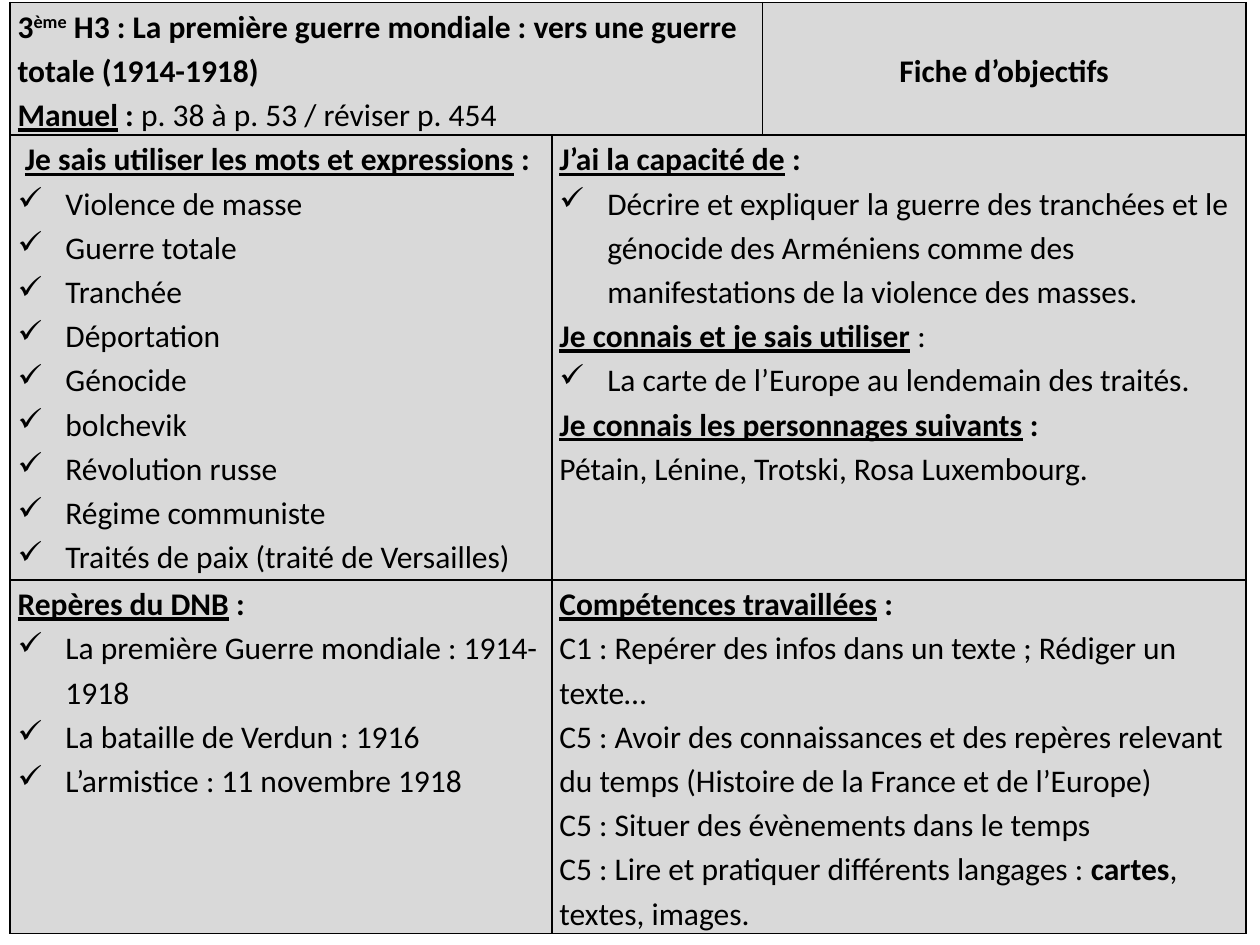
from lxml import etree
from pptx import Presentation
from pptx.dml.color import RGBColor
from pptx.enum import text
from pptx.oxml.ns import qn
from pptx.util import Inches, Pt

FONT, SIZE, INK, GREY = "Calibri", 18, "000000", "D9D9D9"
COLS = [4.3, 1.67, 3.84]
ROWS = [1.02, 3.53, 2.65]
HANG = 0.38


def head(label, tail=" :", style="b"):
    """Underlined heading followed by its colon."""
    return "head", [(label, "bu"), (tail, style)]


def items(*lines):
    return [("item", [(line, "")]) for line in lines]


def plain(*lines):
    return [("plain", [(line, "")]) for line in lines]


# Run styles: b bold, u underlined, s superscript
TITLE = [
    ("plain", [("3", "b"), ("ème", "bs"),
               (" H3 : La première guerre mondiale : vers une guerre totale (1914-1918)", "b")]),
    ("plain", [("Manuel", "bu"), (" :", "b"), (" p. 38 à p. 53 / réviser p. 454", "")]),
]
SHEET = [("center", [("Fiche d’objectifs", "b")])]
WORDS = [
    ("plain", [(" ", "b"), ("Je sais utiliser les mots et expressions", "bu"), (" :", "b")]),
    *items("Violence de masse", "Guerre totale", "Tranchée", "Déportation", "Génocide",
           "bolchevik", "Révolution russe", "Régime communiste",
           "Traités de paix (traité de Versailles)"),
]
SKILLS = [
    head("J’ai la capacité de"),
    *items("Décrire et expliquer la guerre des tranchées et le génocide des Arméniens "
           "comme des manifestations de la violence des masses."),
    head("Je connais et je sais utiliser", style=""),
    *items("La carte de l’Europe au lendemain des traités."),
    head("Je connais les personnages suivants"),
    *plain("Pétain, Lénine, Trotski, Rosa Luxembourg."),
]
DATES = [
    head("Repères du DNB", " :"),
    *items("La première Guerre mondiale : 1914-1918", "La bataille de Verdun : 1916",
           "L’armistice : 11 novembre 1918"),
]
TASKS = [
    head("Compétences travaillées"),
    *plain("C1 : Repérer des infos dans un texte ; Rédiger un texte…",
           "C5 : Avoir des connaissances et des repères relevant du temps "
           "(Histoire de la France et de l’Europe)",
           "C5 : Situer des évènements dans le temps"),
    ("plain", [("C5 : Lire et pratiquer différents langages : ", ""), ("cartes", "b"),
               (", textes, images.", "")]),
]
# Row, first column, last column, paragraphs
CELLS = [
    (0, 0, 1, TITLE), (0, 2, 2, SHEET),
    (1, 0, 0, WORDS), (1, 1, 2, SKILLS),
    (2, 0, 0, DATES), (2, 1, 2, TASKS),
]


def color(code):
    return RGBColor.from_string(code)


def add_check(para):
    props = para._p.get_or_add_pPr()
    props.set("marL", str(Inches(HANG)))
    props.set("indent", str(-Inches(HANG)))
    etree.SubElement(props, qn("a:buChar")).set("char", "✓")


def write(frame, paras):
    for i, (kind, runs) in enumerate(paras):
        para = frame.paragraphs[0] if i == 0 else frame.add_paragraph()
        if kind == "item":
            add_check(para)
        if kind == "center":
            para.alignment = text.PP_ALIGN.CENTER
        para.line_spacing = 1.15
        for words, style in runs:
            run = para.add_run()
            run.text = words
            font = run.font
            font.name, font.size = FONT, Pt(SIZE)
            font.color.rgb = color(INK)
            font.bold, font.underline = "b" in style, "u" in style
            if "s" in style:
                font._element.set("baseline", "30000")


def frame_cell(cell):
    """Give a cell its black borders, grey fill and margins."""
    props = cell._tc.get_or_add_tcPr()
    for side in "LRTB":
        line = etree.SubElement(props, qn("a:ln" + side), w=str(Pt(1)))
        fill = etree.SubElement(line, qn("a:solidFill"))
        etree.SubElement(fill, qn("a:srgbClr"), val=INK)
    cell.fill.solid()
    cell.fill.fore_color.rgb = color(GREY)
    cell.margin_left = cell.margin_right = Inches(0.06)
    cell.margin_top = cell.margin_bottom = 0


def main():
    deck = Presentation()
    deck.slide_width, deck.slide_height = Inches(10), Inches(7.5)
    slide = deck.slides.add_slide(deck.slide_layouts[6])
    table = slide.shapes.add_table(
        len(ROWS), len(COLS), Inches(0.08), Inches(0.02),
        Inches(sum(COLS)), Inches(sum(ROWS))).table
    table.first_row = table.horz_banding = False
    for col, width in zip(table.columns, COLS):
        col.width = Inches(width)
    for row, height in zip(table.rows, ROWS):
        row.height = Inches(height)
    for cell in table.iter_cells():
        frame_cell(cell)
    for row, first, last, paras in CELLS:
        cell = table.cell(row, first)
        if last > first:
            cell.merge(table.cell(row, last))
        write(cell.text_frame, paras)
    table.cell(0, 2).vertical_anchor = text.MSO_ANCHOR.MIDDLE
    deck.save("out.pptx")


if __name__ == "__main__":
    main()
